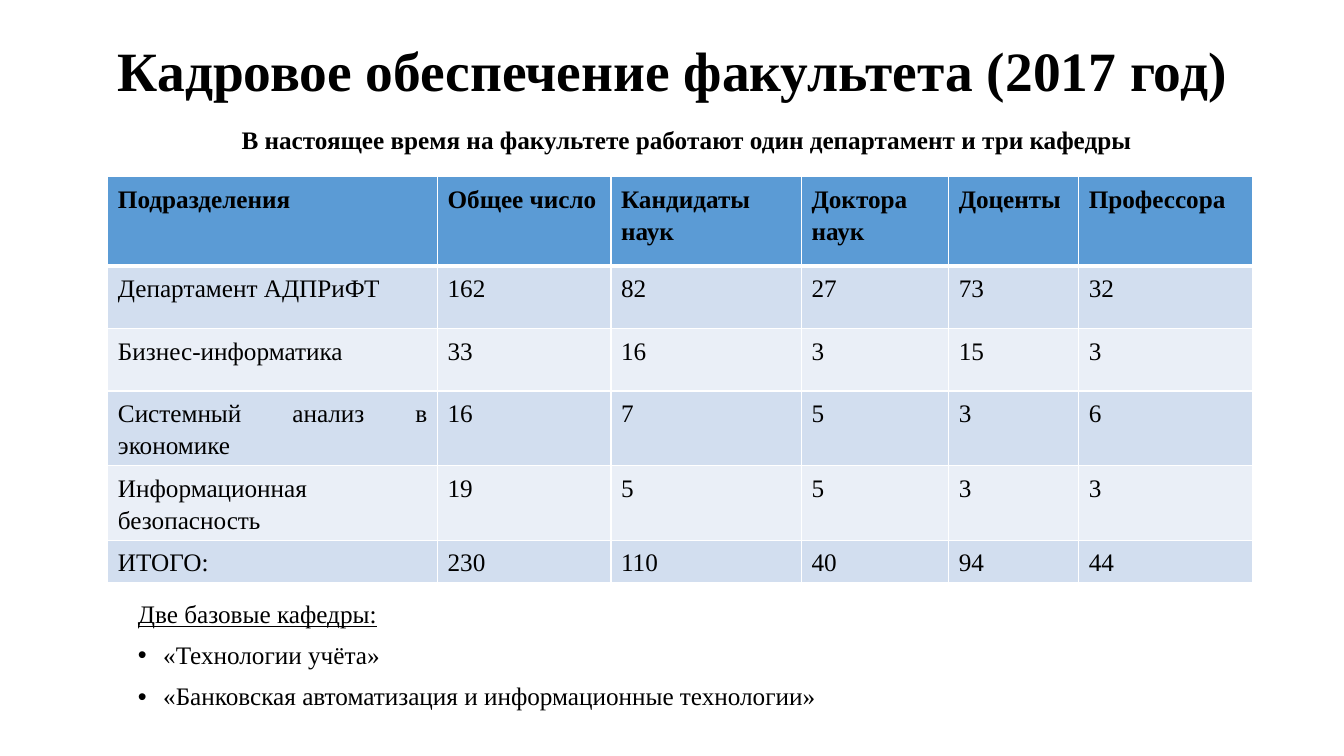
from lxml.etree import SubElement
from pptx import Presentation
from pptx.dml.color import RGBColor
from pptx.enum.text import MSO_ANCHOR, MSO_AUTO_SIZE, PP_ALIGN
from pptx.oxml.ns import qn
from pptx.util import Inches, Pt

BLACK = RGBColor(0x00, 0x00, 0x00)
WHITE = RGBColor(0xFF, 0xFF, 0xFF)
HEADER_BLUE = RGBColor(0x5B, 0x9B, 0xD5)
BAND_DARK = RGBColor(0xD2, 0xDE, 0xEF)
BAND_LIGHT = RGBColor(0xEA, 0xEF, 0xF7)
FONT = "Times New Roman"

STAFF = [
    ("Подразделения", "Общее число", "Кандидаты наук", "Доктора наук", "Доценты", "Профессора"),
    ("Департамент АДПРиФТ", 162, 82, 27, 73, 32),
    ("Бизнес-информатика", 33, 16, 3, 15, 3),
    ("Системный анализ в экономике", 16, 7, 5, 3, 6),
    ("Информационная безопасность", 19, 5, 5, 3, 3),
    ("ИТОГО:", 230, 110, 40, 94, 44),
]
COLUMN_WIDTHS = [3.27, 1.72, 1.89, 1.46, 1.29, 1.72]
ROW_HEIGHTS = [0.89, 0.62, 0.62, 0.74, 0.74, 0.41]
BASE_CHAIRS = ["«Технологии учёта»", "«Банковская автоматизация и информационные технологии»"]


def style(paragraph, size=18, bold=False, align=PP_ALIGN.LEFT, spacing=0.9, before=0, after=0):
    font = paragraph.font
    font.name, font.size, font.bold = FONT, Pt(size), bold
    font.color.rgb = BLACK
    paragraph.alignment = align
    paragraph.line_spacing = spacing
    paragraph.space_before, paragraph.space_after = Pt(before), Pt(after)


def set_bullet(paragraph, char=None):
    """Hang the paragraph on a bullet, or take the bullet off."""
    props = paragraph._p.get_or_add_pPr()
    hang = Inches(0.25) if char else 0
    props.set("marL", str(hang))
    props.set("indent", str(-hang))
    if char:
        SubElement(props, qn("a:buFont"), typeface="Arial")
        SubElement(props, qn("a:buChar"), char=char)
    else:
        SubElement(props, qn("a:buNone"))


def set_borders(cell, **widths):
    props = cell._tc.get_or_add_tcPr()
    for side in "LRTB":
        line = SubElement(props, qn(f"a:ln{side}"), w=str(Pt(widths.get(side, 1))))
        SubElement(SubElement(line, qn("a:solidFill")), qn("a:srgbClr"), val=str(WHITE))


def place(shape, left, top, width, height):
    shape.left, shape.top = Inches(left), Inches(top)
    shape.width, shape.height = Inches(width), Inches(height)


def fill_title(title, box):
    place(title, *box)
    frame = title.text_frame
    frame.text = "Кадровое обеспечение факультета (2017 год)"
    frame.auto_size = MSO_AUTO_SIZE.NONE
    frame.vertical_anchor = MSO_ANCHOR.MIDDLE
    style(frame.paragraphs[0], size=39.6, bold=True, align=PP_ALIGN.CENTER)


def fill_intro(body, box):
    place(body, *box)
    frame = body.text_frame
    frame.text = "В настоящее время на факультете работают один департамент и три кафедры"
    frame.auto_size = MSO_AUTO_SIZE.NONE
    intro = frame.paragraphs[0]
    style(intro, bold=True, align=PP_ALIGN.CENTER, before=10)
    set_bullet(intro)


def add_staff_table(slide, left, top):
    size = Inches(sum(COLUMN_WIDTHS)), Inches(sum(ROW_HEIGHTS))
    table = slide.shapes.add_table(
        len(STAFF), len(COLUMN_WIDTHS), Inches(left), Inches(top), *size).table
    for column, width in zip(table.columns, COLUMN_WIDTHS):
        column.width = Inches(width)
    for r, (unit, height) in enumerate(zip(STAFF, ROW_HEIGHTS)):
        table.rows[r].height = Inches(height)
        is_header = r == 0
        band = HEADER_BLUE if is_header else BAND_DARK if r % 2 else BAND_LIGHT
        for c, value in enumerate(unit):
            cell = table.cell(r, c)
            cell.text = str(value)
            style(cell.text_frame.paragraphs[0], bold=is_header,
                  align=PP_ALIGN.JUSTIFY, spacing=1.15, after=6)
            # A thick rule separates the header from the first row
            set_borders(cell, B=3 if is_header else 1, T=3 if r == 1 else 1)
            cell.fill.solid()
            cell.fill.fore_color.rgb = band


def add_base_chairs(slide, box):
    frame = slide.shapes.add_textbox(*map(Inches, box)).text_frame
    frame.word_wrap = True
    heading = frame.paragraphs[0]
    heading.text = "Две базовые кафедры:"
    style(heading, before=10)
    heading.font.underline = True
    for chair in BASE_CHAIRS:
        item = frame.add_paragraph()
        item.text = chair
        style(item, before=10)
        set_bullet(item, "•")


def main():
    prs = Presentation()
    prs.slide_width, prs.slide_height = Inches(13.33), Inches(7.5)
    slide = prs.slides.add_slide(prs.slide_layouts[1])

    # Title and introduction
    fill_title(slide.shapes.title, (0.92, 0.4, 11.5, 0.65))
    fill_intro(slide.placeholders[1], (1.14, 1.22, 11.34, 4.3))
    # Staff by unit
    add_staff_table(slide, 1.07, 1.75)
    # Base chairs list
    add_base_chairs(slide, (1.27, 5.92, 11.21, 1.21))

    prs.save("out.pptx")


if __name__ == "__main__":
    main()
